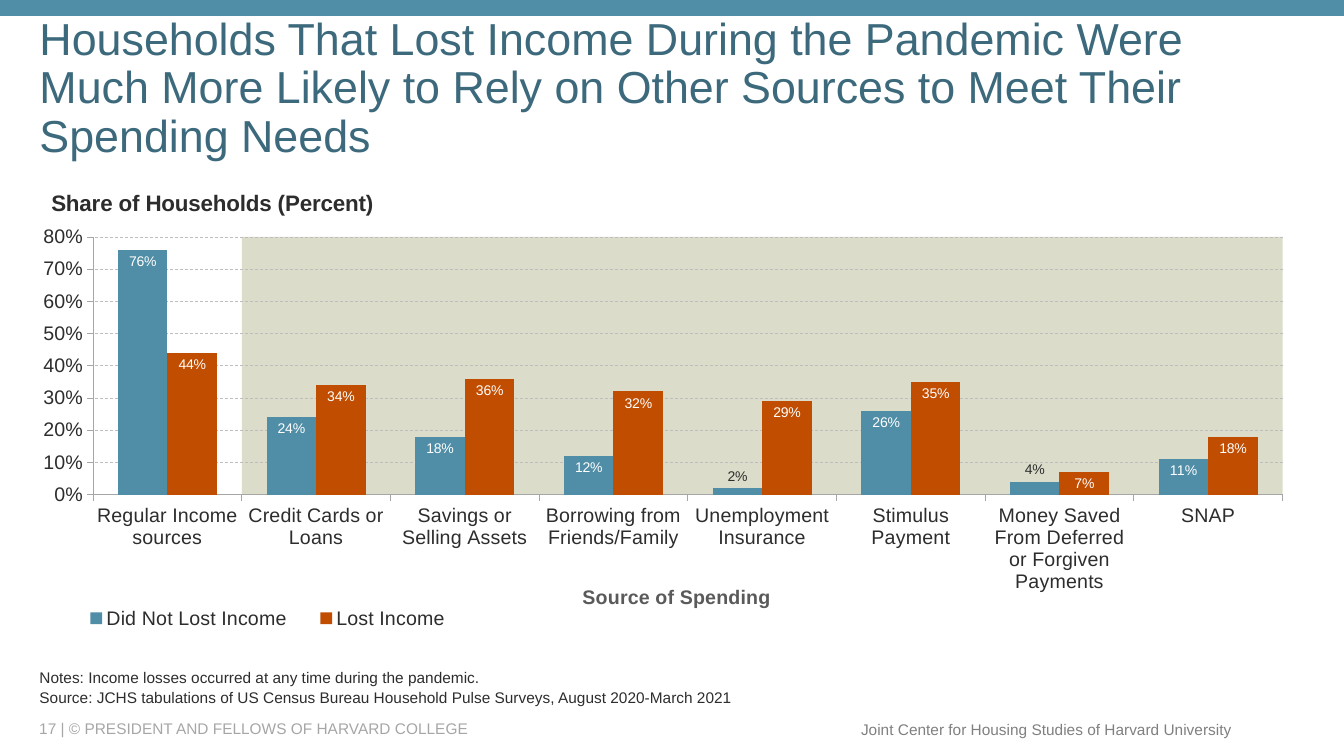
from pptx import Presentation
from pptx.chart.data import CategoryChartData
from pptx.dml.color import RGBColor
from pptx.enum.chart import XL_CHART_TYPE, XL_LABEL_POSITION, XL_LEGEND_POSITION, XL_TICK_MARK
from pptx.enum.dml import MSO_LINE
from pptx.enum.shapes import MSO_SHAPE
from pptx.enum.text import MSO_ANCHOR, MSO_AUTO_SIZE, PP_ALIGN
from pptx.oxml import parse_xml
from pptx.oxml.ns import nsdecls, qn
from pptx.util import Cm, Pt

COLUMNS = XL_CHART_TYPE.COLUMN_CLUSTERED
IN_END, OUT_END = XL_LABEL_POSITION.INSIDE_END, XL_LABEL_POSITION.OUTSIDE_END
BOTTOM, TICK_OUT, DASH = XL_LEGEND_POSITION.BOTTOM, XL_TICK_MARK.OUTSIDE, MSO_LINE.DASH
RECT, NO_FIT = MSO_SHAPE.RECTANGLE, MSO_AUTO_SIZE.NONE
MIDDLE, LOW = MSO_ANCHOR.MIDDLE, MSO_ANCHOR.BOTTOM
LEFT, RIGHT = PP_ALIGN.LEFT, PP_ALIGN.RIGHT

# Content
TITLE = ("Households That Lost Income During the Pandemic Were Much More Likely "
         "to Rely on Other Sources to Meet Their Spending Needs")
NOTES = ["Notes: Income losses occurred at any time during the pandemic.",
         "Source: JCHS tabulations of US Census Bureau Household Pulse Surveys, "
         "August 2020-March 2021"]
RIGHTS = "17 | © PRESIDENT AND FELLOWS OF HARVARD COLLEGE"
CENTER = "Joint Center for Housing Studies of Harvard University"
HEAD, AXIS = "Share of Households (Percent)", "Source of Spending"
SOURCES = ["Regular Income sources", "Credit Cards or Loans", "Savings or Selling Assets",
           "Borrowing from Friends/Family", "Unemployment Insurance", "Stimulus Payment",
           "Money Saved From Deferred or Forgiven Payments", "SNAP"]
SHARES = {"Did Not Lost Income": (0.76, 0.24, 0.18, 0.12, 0.02, 0.26, 0.04, 0.11),
          "Lost Income": (0.44, 0.34, 0.36, 0.32, 0.29, 0.35, 0.07, 0.18)}
SMALL = 0.05  # shares below this are labelled above the bar

# Theme
FACE = "Arial"
THEME = {
    "title": dict(size=32, color="3C6A7C"), "notes": dict(size=11, color="2D2D2D"),
    "rights": dict(size=11, color="A6A6A6"), "center": dict(size=11, color="808080"),
    "chart": dict(size=10, color="5A5A5A"), "head": dict(size=16, color="2D2D2D", bold=True),
    "axis": dict(size=14, color="5A5A5A", bold=True), "tick": dict(size=14, color="2D2D2D"),
    "label": dict(size=10, color="FFFFFF"), "above": dict(size=10, color="2D2D2D"),
    "bars": ("508DA6", "C14D00"), "top": "508DA6", "band": "DBDDCA",
    "line": "A6A6A6", "grid": "BDBDBD",
}

# Places in cm; plot, titles and legend are fractions of the chart
WIDE, HIGH = 33.87, 19.05
CHART = (0.74, 4.37, 32.13, 11.68)
PLOT = (0.05, 0.137, 0.933, 0.556)


def rgb(code):
    return RGBColor.from_string(code)


def style(font, role):
    look = dict(THEME[role])
    font.color.rgb = rgb(look.pop("color"))
    look.update(size=Pt(look["size"]), name=FACE)
    for key, val in look.items():
        setattr(font, key, val)


def write(shape, lines, role, anchor, align=LEFT):
    frame = shape.text_frame
    form = dict(text="\n".join(lines), word_wrap=True, auto_size=NO_FIT, vertical_anchor=anchor)
    for key, val in form.items():
        setattr(frame, key, val)
    for num, para in enumerate(frame.paragraphs):
        props = para._p.get_or_add_pPr()
        props.set("marL", "0")
        props.set("indent", "0")
        props.append(parse_xml(f"<a:buNone {nsdecls('a')}/>"))
        para.alignment = align
        para.space_before = Pt(1 if num else 0)
        for run in para.runs:
            style(run.font, role)
    return frame


def move(shape, *box):
    for key, val in zip(("left", "top", "width", "height"), box):
        setattr(shape, key, Cm(val))


def block(slide, color, *box):
    shape = slide.shapes.add_shape(RECT, *map(Cm, box))
    shape.shadow.inherit = False
    shape.fill.solid()
    shape.fill.fore_color.rgb = rgb(color)
    shape.line.fill.background()


def place(part, index, box, inner=False):
    """Give a chart part a fixed place."""
    for old in part.findall(qn("c:layout")):
        part.remove(old)
    tags = '<c:layoutTarget val="inner"/>' if inner else ""
    tags += '<c:xMode val="edge"/><c:yMode val="edge"/>'
    tags += "".join(f'<c:{key} val="{val}"/>' for key, val in zip("xywh", box))
    part.insert(index, parse_xml(f"<c:layout {nsdecls('c')}><c:manualLayout>{tags}"
                                 "</c:manualLayout></c:layout>"))


def caption(title, text, role, spot):
    title.text_frame.text = text
    style(title.text_frame.paragraphs[0].runs[0].font, role)
    place(title._element, 1, spot)


def rule(line, color):
    line.color.rgb = rgb(color)
    line.width = Pt(0.5)


def draw(slide):
    data = CategoryChartData(number_format="0%")
    data.categories = SOURCES
    for name, vals in SHARES.items():
        data.add_series(name, vals)
    chart = slide.shapes.add_chart(COLUMNS, *map(Cm, CHART), data).chart
    style(chart.font, "chart")
    caption(chart.chart_title, HEAD, "head", (0.014, 0.025))
    chart.chart_title.include_in_layout = False
    place(chart._chartSpace.chart.plotArea, 0, PLOT, inner=True)

    # Axes
    cat, val = chart.category_axis, chart.value_axis
    caption(cat.axis_title, AXIS, "axis", (0.431, 0.878))
    for axis in (cat, val):
        axis.major_tick_mark = TICK_OUT
        style(axis.tick_labels.font, "tick")
        rule(axis.format.line, THEME["line"])
    for key, num in dict(minimum_scale=0, maximum_scale=0.8, major_unit=0.1).items():
        setattr(val, key, num)
    val.tick_labels.number_format = "0%"
    val.tick_labels.number_format_is_linked = False
    grid = val.major_gridlines.format.line
    rule(grid, THEME["grid"])
    grid.dash_style = DASH

    # Legend
    chart.has_legend = True
    key = chart.legend
    key.position, key.include_in_layout = BOTTOM, False
    style(key.font, "tick")
    place(key._element, 1, (0.027, 0.925, 0.32, 0.07))

    # Bars and labels
    plot = chart.plots[0]
    plot.gap_width, plot.overlap, plot.vary_by_categories = 100, 0, False
    for bar, color in zip(plot.series, THEME["bars"]):
        bar.format.fill.solid()
        bar.format.fill.fore_color.rgb = rgb(color)
        labels = bar.data_labels
        form = dict(show_value=True, position=IN_END, number_format="0%",
                    number_format_is_linked=False)
        for name, item in form.items():
            setattr(labels, name, item)
        style(labels.font, "label")
        for num, share in enumerate(bar.values):
            if share < SMALL:
                label = bar.points[num].data_label
                style(label.font, "above")
                label.position = OUT_END


def main():
    deck = Presentation()
    deck.slide_width, deck.slide_height = Cm(WIDE), Cm(HIGH)
    slide = deck.slides.add_slide(deck.slide_layouts[1])

    # Title and notes
    title, notes = slide.placeholders
    move(title, 0.74, 1.02, 32.13, 2.46)
    write(title, [TITLE], "title", MIDDLE).paragraphs[0].line_spacing = 0.9
    move(notes, 0.74, 16.46, 29.85, 1.47)
    write(notes, NOTES, "notes", LOW)

    # Footer and top bar
    for text, role, align, box in (
            (RIGHTS, "rights", LEFT, (0.74, 18.11, 20.12, 0.51)),
            (CENTER, "center", RIGHT, (21.39, 18.01, 9.91, 0.74))):
        write(slide.shapes.add_textbox(*map(Cm, box)), [text], role, MIDDLE, align)
    block(slide, THEME["top"], 0, 0, WIDE, 0.4)

    # Band behind every source but the first
    left, top, wide, high = CHART
    step = PLOT[2] * wide / len(SOURCES)
    block(slide, THEME["band"], left + PLOT[0] * wide + step, top + PLOT[1] * high,
          step * (len(SOURCES) - 1), PLOT[3] * high)
    draw(slide)
    deck.save("out.pptx")


if __name__ == "__main__":
    main()
